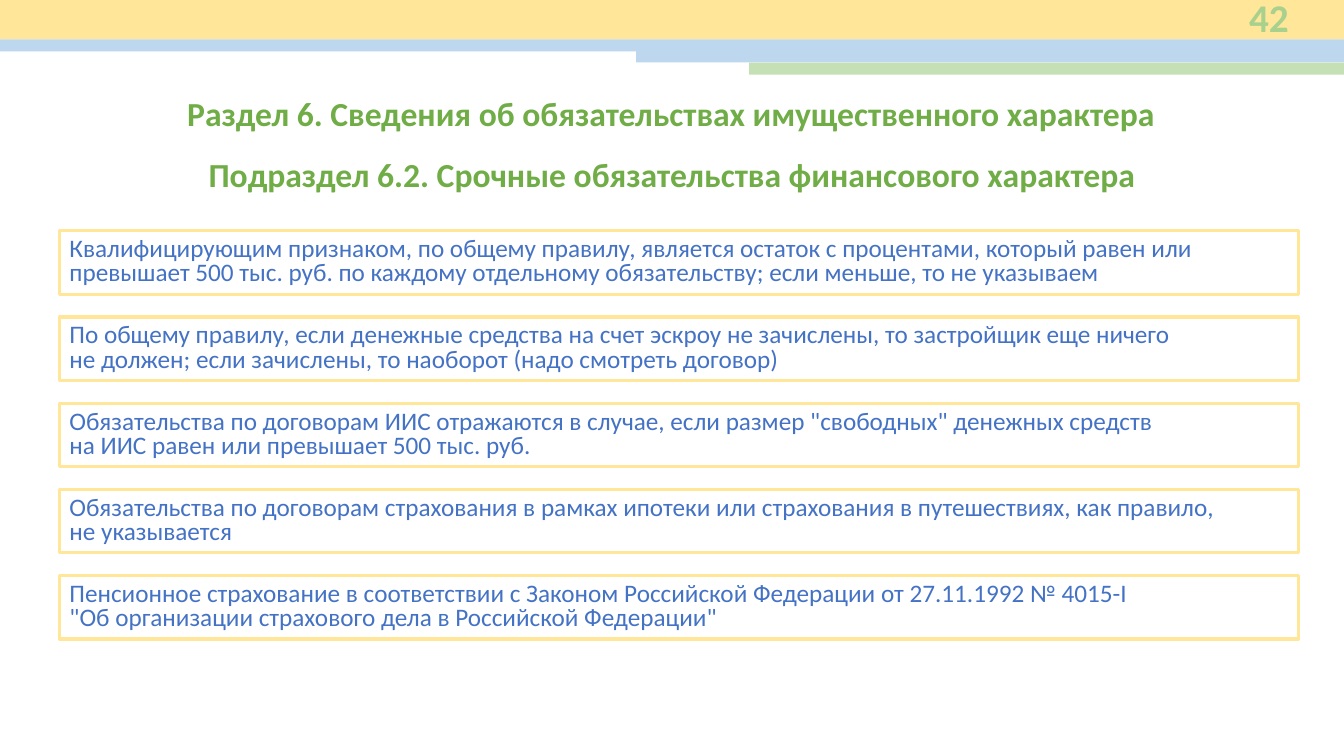
from pptx import Presentation
from pptx.dml.color import RGBColor
from pptx.enum import shapes, text
from pptx.util import Inches, Pt

SECTION = "Раздел 6. Сведения об обязательствах имущественного характера"
SUBSECTION = "Подраздел 6.2. Срочные обязательства финансового характера"
PAGE_NUMBER = "42"
RULES = [
    "Квалифицирующим признаком, по общему правилу, является остаток с процентами, который равен "
    "или превышает 500 тыс. руб. по каждому отдельному обязательству; если меньше, то не указываем",
    "По общему правилу, если денежные средства на счет эскроу не зачислены, то застройщик еще ничего "
    "\vне должен; если зачислены, то наоборот (надо смотреть договор)",
    "Обязательства по договорам ИИС отражаются в случае, если размер \"свободных\" денежных средств "
    "\vна ИИС равен или превышает 500 тыс. руб.",
    "Обязательства по договорам страхования в рамках ипотеки или страхования в путешествиях, "
    "как правило, \vне указывается",
    "Пенсионное страхование в соответствии с Законом Российской Федерации от 27.11.1992 № 4015-I "
    "\v\"Об организации страхового дела в Российской Федерации\"",
]
YELLOW, BLUE, GREEN = "FFE699", "BDD7EE", "C5E0B4"
HEADING_GREEN, NUMBER_GREEN, RULE_BLUE = "70AD47", "A9D18E", "4472C4"
SLIDE_WIDTH = 13.33
BANDS = [
    (0, 0, 0.39, YELLOW),
    (0, 0.39, 0.12, BLUE),
    (6.31, 0.5, 0.12, BLUE),
    (7.43, 0.62, 0.12, GREEN),
]
RULE_TOP, RULE_STEP = 2.29, 0.855


def color(value):
    return RGBColor.from_string(value)


def box(left, top, width, height):
    return [Inches(value) for value in (left, top, width, height)]


def write(shape, content, size, fill, bold=False, align=text.PP_ALIGN.LEFT,
          anchor=text.MSO_ANCHOR.MIDDLE, spacing=1.0):
    frame = shape.text_frame
    frame.word_wrap = True
    frame.auto_size = text.MSO_AUTO_SIZE.NONE
    frame.vertical_anchor = anchor
    frame.margin_left = frame.margin_right = Inches(0.1)
    frame.margin_top = frame.margin_bottom = Inches(0.05)
    paragraph = frame.paragraphs[0]
    paragraph.text = content
    paragraph.alignment = align
    paragraph.line_spacing = spacing
    for run in paragraph.runs:
        run.font.name = "Calibri"
        run.font.size = Pt(size)
        run.font.bold = bold
        run.font.color.rgb = color(fill)


def rectangle(slide, area, fill=None, line=None):
    shape = slide.shapes.add_shape(shapes.MSO_SHAPE.RECTANGLE, *area)
    shape.shadow.inherit = False
    if fill:
        shape.fill.solid()
        shape.fill.fore_color.rgb = color(fill)
    else:
        shape.fill.background()
    if line:
        shape.line.color.rgb = color(line)
        shape.line.width = Pt(2.25)
    else:
        shape.line.fill.background()
    return shape


def main():
    deck = Presentation()
    deck.slide_width, deck.slide_height = Inches(SLIDE_WIDTH), Inches(7.5)
    slide = deck.slides.add_slide(deck.slide_layouts[5])

    for left, top, height, fill in BANDS:
        rectangle(slide, box(left, top, SLIDE_WIDTH - left, height), fill=fill)

    section = slide.shapes.title
    section.left, section.top, section.width, section.height = box(0.59, 0.87, 12.13, 0.5)
    subsection = slide.shapes.add_textbox(*box(0.6, 1.48, 12.13, 0.5))
    for heading, content in ((section, SECTION), (subsection, SUBSECTION)):
        write(heading, content, 24, HEADING_GREEN, bold=True,
              align=text.PP_ALIGN.CENTER, anchor=text.MSO_ANCHOR.TOP)

    for index, content in enumerate(RULES):
        area = box(0.59, RULE_TOP + index * RULE_STEP, 12.29, 0.63)
        write(rectangle(slide, area, line=YELLOW), content, 18, RULE_BLUE, spacing=0.8)

    page_number = slide.shapes.add_textbox(*box(11.63, -0.05, 1.25, 0.44))
    write(page_number, PAGE_NUMBER, 28, NUMBER_GREEN, bold=True, align=text.PP_ALIGN.RIGHT)

    deck.save("out.pptx")


if __name__ == "__main__":
    main()
